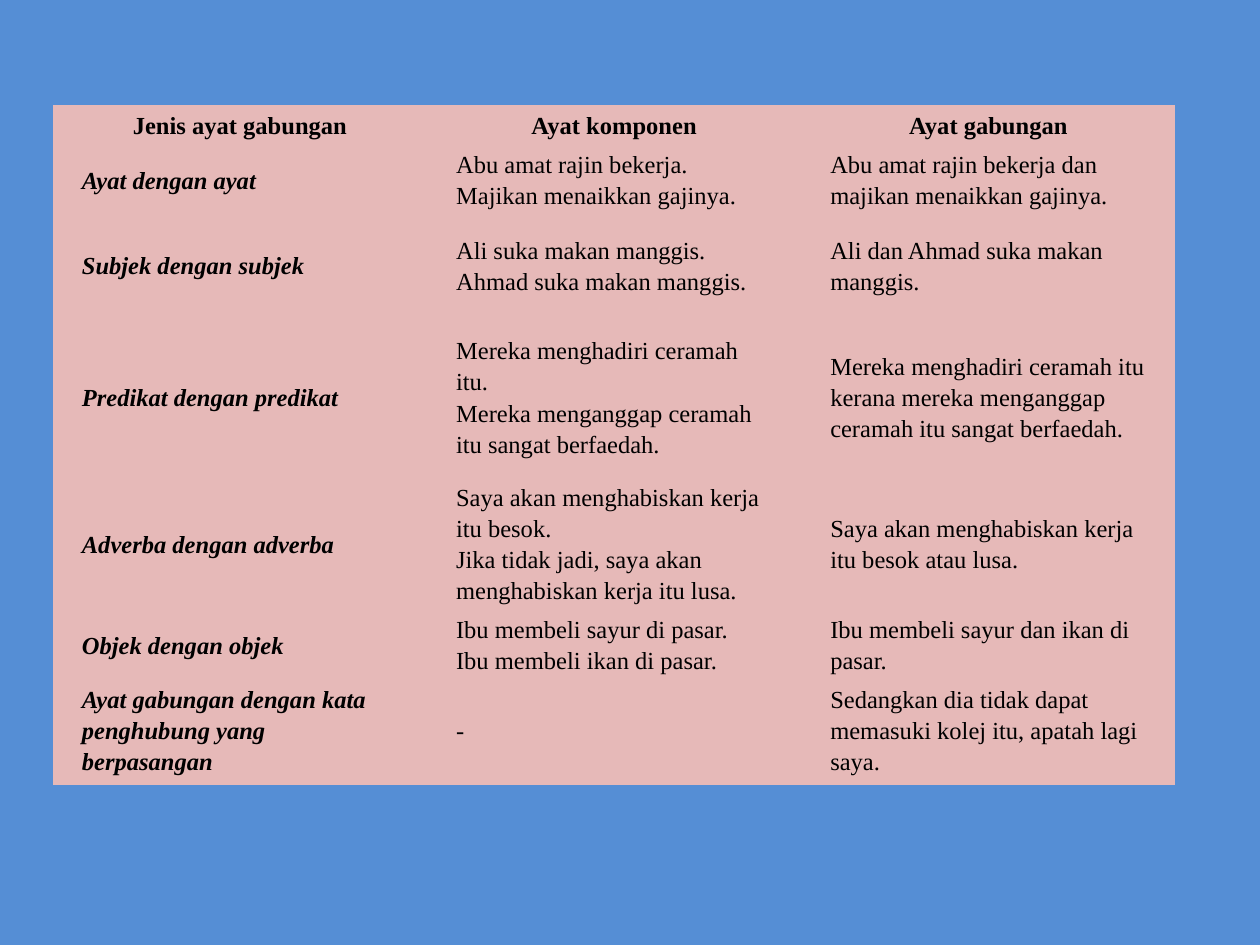
from dataclasses import dataclass

from lxml.etree import SubElement
from pptx import Presentation
from pptx.dml.color import RGBColor
from pptx.enum.text import MSO_ANCHOR as Anchor, PP_ALIGN as Align
from pptx.oxml.ns import qn
from pptx.table import _Cell as Cell
from pptx.util import Inches, Pt

COLORS = {"background": "558ED5", "cell": "E6B9B8", "text": "000000"}
FONT_NAME = "Times New Roman"
FONT_SIZE = 14
COLUMN_WIDTH = 2.97
HEADERS = ("Jenis ayat gabungan", "Ayat komponen", "Ayat gabungan")


@dataclass(frozen=True)
class SentenceRow:
    height: float
    kind: str
    components: str
    combined: str
    bottom_margin: float = 0.02


@dataclass(frozen=True)
class CellStyle:
    side_margin: float = 0.23
    top_margin: float = 0.02
    bottom_margin: float = 0.02
    alignment: Align = Align.LEFT
    bold: bool = False
    italic: bool = False


HEADER_HEIGHT = 0.31
ROWS = (
    SentenceRow(0.56, "Ayat dengan ayat",
                "Abu amat rajin bekerja.\nMajikan menaikkan gajinya.",
                "Abu amat rajin bekerja dan majikan menaikkan gajinya."),
    SentenceRow(0.8, "Subjek dengan subjek",
                "Ali suka makan manggis.\nAhmad suka makan manggis.",
                "Ali dan Ahmad suka makan manggis."),
    SentenceRow(1.29, "Predikat dengan predikat",
                "Mereka menghadiri ceramah itu.\n"
                "Mereka menganggap ceramah itu sangat berfaedah.",
                "Mereka menghadiri ceramah itu kerana mereka menganggap "
                "ceramah itu sangat berfaedah."),
    SentenceRow(1.04, "Adverba dengan adverba",
                "Saya akan menghabiskan kerja itu besok.\n"
                "Jika tidak jadi, saya akan menghabiskan kerja itu lusa.",
                "Saya akan menghabiskan kerja itu besok atau lusa."),
    SentenceRow(0.56, "Objek dengan objek",
                "Ibu membeli sayur di pasar.\nIbu membeli ikan di pasar.",
                "Ibu membeli sayur dan ikan di pasar."),
    SentenceRow(0.84, "Ayat gabungan dengan kata penghubung yang berpasangan",
                "-",
                "Sedangkan dia tidak dapat memasuki kolej itu, apatah lagi saya.",
                bottom_margin=0.06),
)


def rgb(name: str) -> RGBColor:
    return RGBColor.from_string(COLORS[name])


def clear_borders(cell: Cell) -> None:
    properties = cell._tc.get_or_add_tcPr()
    for side in ("lnL", "lnR", "lnT", "lnB"):
        border = SubElement(properties, qn(f"a:{side}"), w="0")
        SubElement(border, qn("a:noFill"))


def write_cell(cell: Cell, text: str, style: CellStyle) -> None:
    clear_borders(cell)
    cell.fill.solid()
    cell.fill.fore_color.rgb = rgb("cell")
    cell.vertical_anchor = Anchor.MIDDLE
    cell.margin_left = cell.margin_right = Inches(style.side_margin)
    cell.margin_top = Inches(style.top_margin)
    cell.margin_bottom = Inches(style.bottom_margin)
    paragraph = cell.text_frame.paragraphs[0]
    paragraph.alignment = style.alignment
    paragraph.line_spacing = 1.15
    for index, line in enumerate(text.split("\n")):
        if index:
            paragraph.add_line_break()
        run = paragraph.add_run()
        run.text = line
        run.font.name = FONT_NAME
        run.font.size = Pt(FONT_SIZE)
        run.font.bold = style.bold
        run.font.italic = style.italic
        run.font.color.rgb = rgb("text")


def main() -> None:
    presentation = Presentation()
    presentation.slide_width = Inches(10)
    presentation.slide_height = Inches(7.5)
    slide = presentation.slides.add_slide(presentation.slide_layouts[6])
    slide.background.fill.solid()
    slide.background.fill.fore_color.rgb = rgb("background")

    heights = [HEADER_HEIGHT] + [row.height for row in ROWS]
    table = slide.shapes.add_table(
        len(heights), len(HEADERS), Inches(0.42), Inches(0.83),
        Inches(COLUMN_WIDTH * len(HEADERS)), Inches(sum(heights))).table
    table.first_row = False
    table.horz_banding = False
    for column in table.columns:
        column.width = Inches(COLUMN_WIDTH)
    for table_row, height in zip(table.rows, heights):
        table_row.height = Inches(height)

    for column_index, header in enumerate(HEADERS):
        side, vertical = (0.01, 0.01) if column_index else (0.17, 0.02)
        write_cell(table.cell(0, column_index), header,
                   CellStyle(side, vertical, vertical, Align.CENTER, bold=True))
    for row_index, row in enumerate(ROWS, start=1):
        for column_index, text in enumerate((row.kind, row.components, row.combined)):
            is_kind = column_index == 0
            write_cell(table.cell(row_index, column_index), text,
                       CellStyle(bottom_margin=row.bottom_margin,
                                 bold=is_kind, italic=is_kind))

    presentation.save("out.pptx")


if __name__ == "__main__":
    main()
